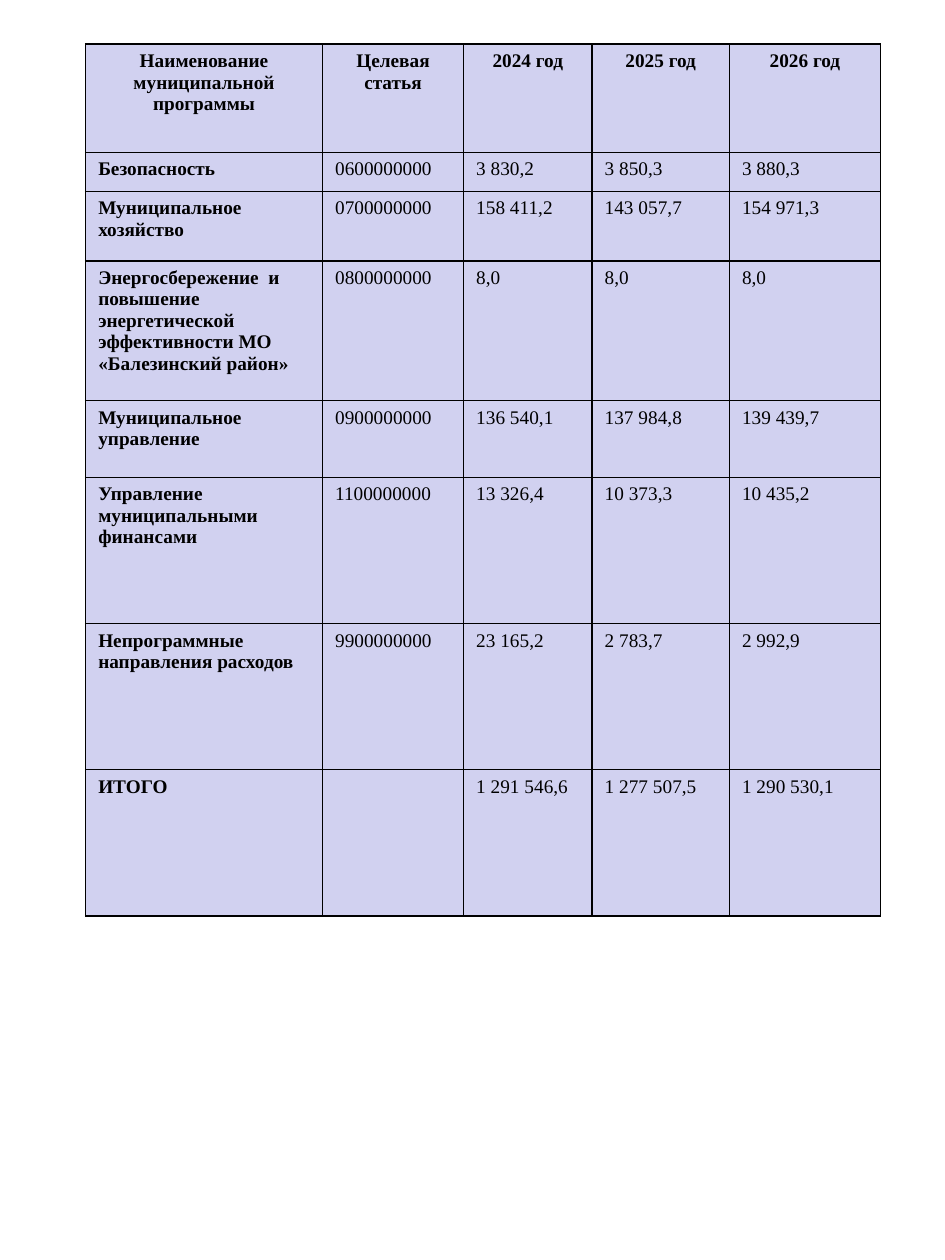
from pptx import Presentation
from pptx.dml.color import RGBColor
from pptx.enum.text import PP_ALIGN as Align
from pptx.oxml import parse_xml
from pptx.oxml.ns import nsdecls
from pptx.util import Inches, Pt

LILAC = RGBColor(0xD1, 0xD1, 0xF0)
BLACK = RGBColor(0, 0, 0)
FONT = "Times New Roman"

COLS = [1.88, 1.12, 1.02, 1.09, 1.2]
HEIGHTS = [0.86, 0.31, 0.55, 1.11, 0.61, 1.16, 1.16, 1.16]
ROWS = [
    ("Наименование муниципальной программы", "Целевая статья", "2024 год", "2025 год", "2026 год"),
    ("Безопасность", "0600000000", "3 830,2", "3 850,3", "3 880,3"),
    ("Муниципальное хозяйство", "0700000000", "158 411,2", "143 057,7", "154 971,3"),
    ("Энергосбережение  и повышение энергетической эффективности МО «Балезинский район»",
     "0800000000", "8,0", "8,0", "8,0"),
    ("Муниципальное управление", "0900000000", "136 540,1", "137 984,8", "139 439,7"),
    ("Управление муниципальными финансами", "1100000000", "13 326,4", "10 373,3", "10 435,2"),
    ("Непрограммные направления расходов", "9900000000", "23 165,2", "2 783,7", "2 992,9"),
    ("ИТОГО", "", "1 291 546,6", "1 277 507,5", "1 290 530,1"),
]


def set_edges(cell):
    props = cell._tc.get_or_add_tcPr()
    for place, side in enumerate(("lnL", "lnR", "lnT", "lnB")):
        props.insert(place, parse_xml(
            f'<a:{side} {nsdecls("a")} w="{Pt(1)}"><a:solidFill>'
            f'<a:srgbClr val="{BLACK}"/></a:solidFill></a:{side}>'))


def fill_cell(cell, text, bold, align):
    cell.fill.solid()
    cell.fill.fore_color.rgb = LILAC
    set_edges(cell)
    cell.text_frame.text = text
    para = cell.text_frame.paragraphs[0]
    para.alignment = align
    para.font.size = Pt(11)
    for run in para.runs:
        font = run.font
        font.name = FONT
        font.size = Pt(11)
        font.bold = bold
        font.color.rgb = BLACK


def add_budget(slide):
    frame = slide.shapes.add_table(
        len(ROWS), len(COLS), Inches(0.68), Inches(0.35),
        Inches(sum(COLS)), Inches(sum(HEIGHTS)))
    table = frame.table
    for col, width in zip(table.columns, COLS):
        col.width = Inches(width)
    for row, height in zip(table.rows, HEIGHTS):
        row.height = Inches(height)
    for r, texts in enumerate(ROWS):
        align = Align.CENTER if r == 0 else Align.LEFT
        for c, text in enumerate(texts):
            fill_cell(table.cell(r, c), text, r == 0 or c == 0, align)


def main():
    deck = Presentation()
    deck.slide_width = Inches(7.5)
    deck.slide_height = Inches(10)
    slide = deck.slides.add_slide(deck.slide_layouts[6])
    add_budget(slide)
    deck.save("out.pptx")


if __name__ == "__main__":
    main()
